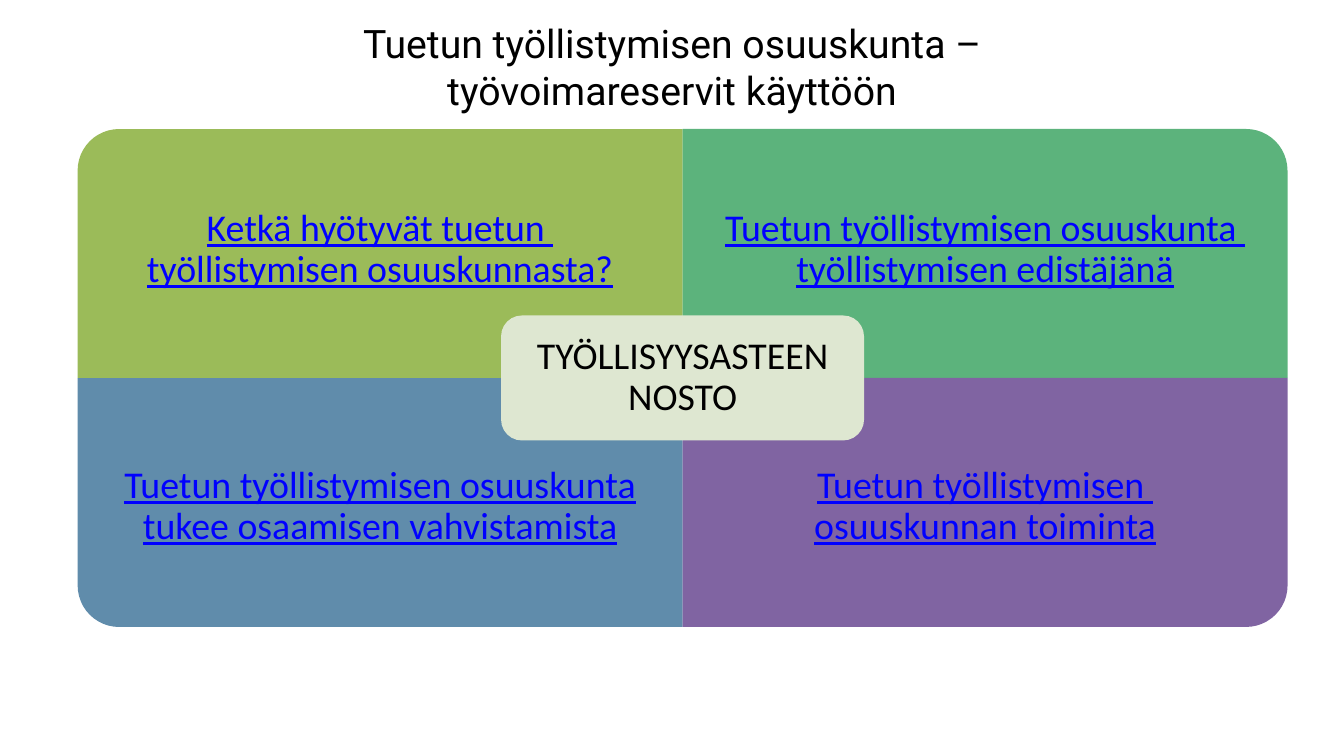
from pptx import Presentation
from pptx.dml.color import RGBColor
from pptx.enum.shapes import MSO_SHAPE as SHAPE
from pptx.enum.text import MSO_ANCHOR as ANCHOR, PP_ALIGN as ALIGN
from pptx.util import Inches, Pt

BLACK = RGBColor(0x00, 0x00, 0x00)
LINK_BLUE = RGBColor(0x00, 0x00, 0xFF)
LIME = RGBColor(0x9B, 0xBB, 0x59)
GREEN = RGBColor(0x5C, 0xB3, 0x7C)
BLUE = RGBColor(0x60, 0x8C, 0xAB)
PURPLE = RGBColor(0x80, 0x64, 0xA2)
PALE = RGBColor(0xDE, 0xE7, 0xD1)

LEFT, TOP = 0.77, 1.28
QUAD_W, QUAD_H = 6, 2.47
LABEL_H = 1.86

prs = Presentation()
prs.slide_width, prs.slide_height = Inches(13.33), Inches(7.5)
s = prs.slides.add_slide(prs.slide_layouts[6])


def add_panel(kind, x, y, w, h, color):
    sp = s.shapes.add_shape(kind, Inches(x), Inches(y), Inches(w), Inches(h))
    sp.shadow.inherit = False
    sp.fill.solid()
    sp.fill.fore_color.rgb = color
    sp.line.fill.background()
    return sp


def add_label(text, x, y, w, h, inset, spacing, color, font):
    sp = s.shapes.add_textbox(Inches(x), Inches(y), Inches(w), Inches(h))
    tf = sp.text_frame
    tf.word_wrap = True
    tf.vertical_anchor = ANCHOR.MIDDLE
    for side in ("left", "top", "right", "bottom"):
        setattr(tf, f"margin_{side}", Inches(inset))
    p = tf.paragraphs[0]
    p.text = text
    p.alignment = ALIGN.CENTER
    p.line_spacing = spacing
    for r in p.runs:
        r.font.color.rgb = color
        for name, value in font.items():
            setattr(r.font, name, value)


TITLE_FONT = {"name": "Roboto", "size": Pt(28)}
BODY_FONT = {"name": "Calibri", "size": Pt(27)}
LINK_FONT = {**BODY_FONT, "underline": True}

add_label("Tuetun työllistymisen osuuskunta –\ntyövoimareservit käyttöön",
          0, 0.03, 13.33, 1.25, 0.1, 1.0, BLACK, TITLE_FONT)

quadrants = [
    (0, 0, 270, LIME, "Ketkä hyötyvät tuetun \ntyöllistymisen osuuskunnasta?"),
    (1, 0, 0, GREEN, "Tuetun työllistymisen osuuskunta \ntyöllistymisen edistäjänä"),
    (0, 1, 180, BLUE, "Tuetun työllistymisen osuuskunta tukee osaamisen vahvistamista"),
    (1, 1, 90, PURPLE, "Tuetun työllistymisen \nosuuskunnan toiminta"),
]
label_tops = (1.55, 4.1)

for col, row, angle, color, text in quadrants:
    x, y = LEFT + col * QUAD_W, TOP + row * QUAD_H
    w, h = (QUAD_H, QUAD_W) if angle % 180 else (QUAD_W, QUAD_H)
    sp = add_panel(SHAPE.ROUND_1_RECTANGLE, x + (QUAD_W - w) / 2,
                   y + (QUAD_H - h) / 2, w, h, color)
    sp.rotation = angle
    add_label(text, x, label_tops[row], QUAD_W, LABEL_H, 0.21, 0.9,
              LINK_BLUE, LINK_FONT)

add_panel(SHAPE.ROUNDED_RECTANGLE, 4.97, 3.13, 3.6, 1.24, PALE)
add_label("TYÖLLISYYSASTEEN\nNOSTO", 5.03, 3.19, 3.48, 1.12, 0.11, 0.9,
          BLACK, BODY_FONT)

prs.save("out.pptx")
